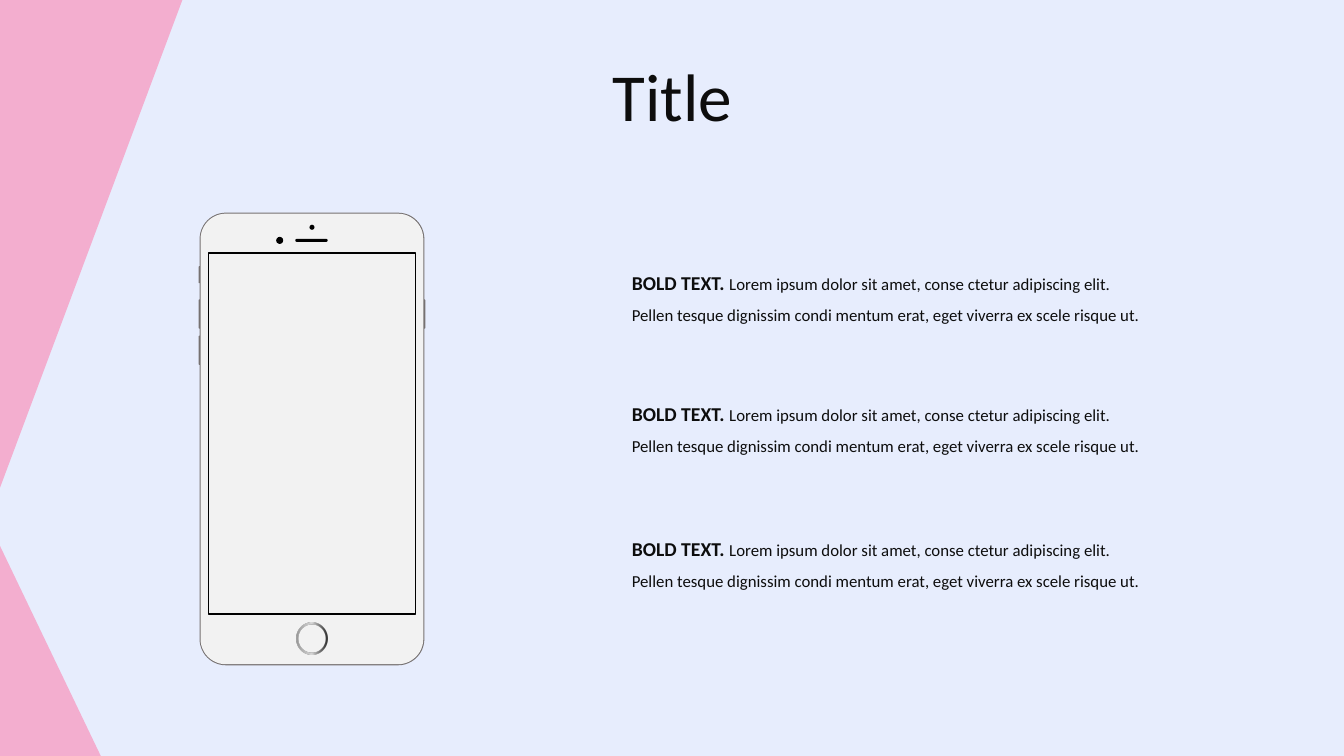
from dataclasses import dataclass
from lxml.etree import SubElement
from pptx import Presentation
from pptx.dml.color import RGBColor
from pptx.enum.shapes import MSO_SHAPE
from pptx.enum.text import MSO_ANCHOR, MSO_AUTO_SIZE, PP_ALIGN
from pptx.oxml.ns import qn
from pptx.util import Inches, Pt


@dataclass(frozen=True)
class Theme:
    back: str = "E7EDFD"
    pink: str = "F3AECF"
    ink: str = "0D0D0D"
    edge: str = "767171"
    face: str = "F2F2F2"
    black: str = "000000"
    ring: tuple = ((0, "979797", 100), (50, "D7D7D7", 100), (100, "000000", 80))
    font: str = "Calibri"
    head: int = 48
    lead: int = 14
    body: int = 12


LOOK = Theme()
COLS, ROWS = 160, 90
TITLE = "Title"
LEAD = "BOLD TEXT. "
BODY = ("Lorem ipsum dolor sit amet, conse ctetur adipiscing elit. "
        "Pellen tesque dignissim condi mentum erat, eget viverra ex scele risque ut.")
ITEMS = [(30.24, LEAD, BODY), (45.84, LEAD, BODY), (61.92, LEAD, BODY)]

TITLE_BOX = (36.72, 5.88, 86.64, 10.92)
TEXT_LEFT, TEXT_WIDE, TEXT_HIGH = 74.04, 64.56, 8.76
CORNERS = [((0, 65, 12, 25), False), ((0, 0, 21.72, 58.08), True)]
LEFT_KEY, RIGHT_KEY, KEY_WIDE = 23.64, 50.04, 0.6
KEYS = [(LEFT_KEY, 31.68, 2.04), (LEFT_KEY, 35.64, 3.48),
        (LEFT_KEY, 39.96, 3.48), (RIGHT_KEY, 35.64, 3.48)]
ROUND, OVAL = MSO_SHAPE.ROUNDED_RECTANGLE, MSO_SHAPE.OVAL
PARTS = [
    (ROUND, (23.76, 25.32, 26.76, 53.88), LOOK.edge, 0.117),
    (ROUND, (23.88, 25.44, 26.52, 53.64), LOOK.face, 0.114),
    (OVAL, (32.88, 28.2, 0.84, 0.84), LOOK.black, None),
    (OVAL, (36.84, 26.76, 0.6, 0.6), LOOK.black, None),
    (ROUND, (35.16, 28.44, 3.84, 0.36), LOOK.black, 0.5),
]
HOME = (35.28, 74.16, 3.72, 3.72)
SCREEN = (24.84, 30.12, 24.6, 42.96)

deck = Presentation()
deck.slide_width, deck.slide_height = Inches(13.33), Inches(7.5)
CELL_X, CELL_Y = deck.slide_width / COLS, deck.slide_height / ROWS


def place(box):
    left, top, wide, high = box
    return [round(n) for n in (left * CELL_X, top * CELL_Y, wide * CELL_X, high * CELL_Y)]


def draw(shapes, kind, box, fill=None, bend=None, line=None):
    shape = shapes.add_shape(kind, *place(box))
    shape.shadow.inherit = False
    if bend is not None:
        shape.adjustments[0] = bend
    if fill:
        shape.fill.solid()
        shape.fill.fore_color.rgb = RGBColor.from_string(fill)
    else:
        shape.fill.background()
    if line:
        shape.line.color.rgb = RGBColor.from_string(line)
        shape.line.width = Pt(1)
    else:
        shape.line.fill.background()
    return shape


def blend(shape, stops):
    shape.fill.gradient()
    shape.fill.gradient_angle = 0
    chain = shape.fill._xPr.find(qn("a:gradFill")).find(qn("a:gsLst"))
    for old in list(chain):
        chain.remove(old)
    for spot, tint, alpha in stops:
        stop = SubElement(chain, qn("a:gs"), pos=str(spot * 1000))
        color = SubElement(stop, qn("a:srgbClr"), val=tint)
        if alpha < 100:
            SubElement(color, qn("a:alpha"), val=str(alpha * 1000))


def write(shape, runs, align=PP_ALIGN.LEFT, space=1, anchor=MSO_ANCHOR.TOP):
    frame = shape.text_frame
    frame.word_wrap = True
    frame.auto_size = MSO_AUTO_SIZE.SHAPE_TO_FIT_TEXT
    frame.vertical_anchor = anchor
    para = frame.paragraphs[0]
    para.alignment = align
    para.line_spacing = space
    for text, size, bold in runs:
        run = para.add_run()
        run.text = text
        run.font.name = LOOK.font
        run.font.size = Pt(size)
        run.font.bold = bold
        run.font.color.rgb = RGBColor.from_string(LOOK.ink)


def main():
    slide = deck.slides.add_slide(deck.slide_layouts[5])
    slide.background.fill.solid()
    slide.background.fill.fore_color.rgb = RGBColor.from_string(LOOK.back)

    for box, flip in CORNERS:
        corner = draw(slide.shapes, MSO_SHAPE.RIGHT_TRIANGLE, box, LOOK.pink)
        if flip:
            corner._element.spPr.find(qn("a:xfrm")).set("flipV", "1")

    phone = slide.shapes.add_group_shape().shapes
    for left, top, high in KEYS:
        draw(phone, ROUND, (left, top, KEY_WIDE, high), LOOK.edge, 0.2)
    for kind, box, fill, bend in PARTS:
        draw(phone, kind, box, fill, bend)
    blend(draw(phone, MSO_SHAPE.DONUT, HOME, bend=0.07), LOOK.ring)
    draw(slide.shapes, MSO_SHAPE.RECTANGLE, SCREEN, line=LOOK.black)

    title = slide.shapes.title
    title.left, title.top, title.width, title.height = place(TITLE_BOX)
    write(title, [(TITLE, LOOK.head, False)], align=PP_ALIGN.CENTER)

    for top, lead, body in ITEMS:
        box = slide.shapes.add_textbox(*place((TEXT_LEFT, top, TEXT_WIDE, TEXT_HIGH)))
        write(box, [(lead, LOOK.lead, True), (body, LOOK.body, False)], space=1.5)

    deck.save("out.pptx")


if __name__ == "__main__":
    main()
